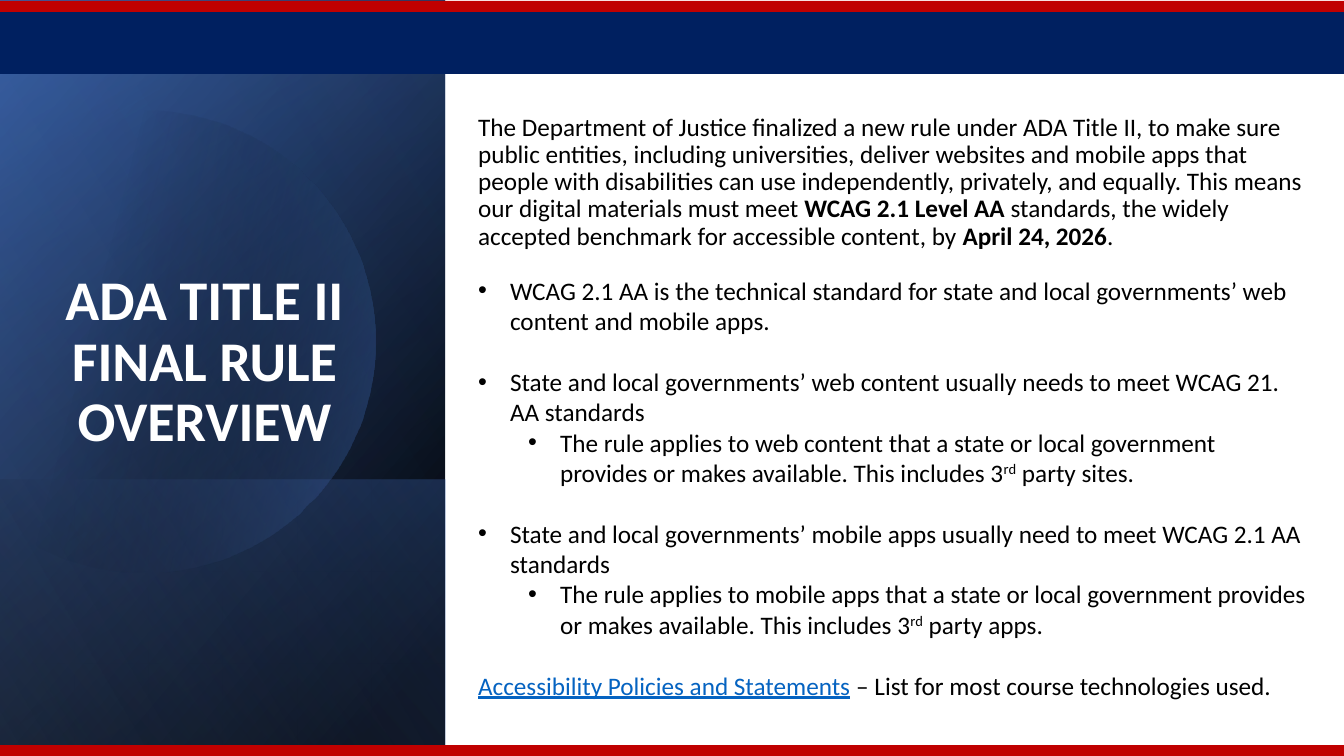
import math

import pptx
import pptx.dml.color
import pptx.enum.shapes
import pptx.enum.text
import pptx.oxml
import pptx.oxml.ns
import pptx.util

PX = 914400 / 100.8
WIDTH, HEIGHT = 1344, 756
FONT = "Calibri"
COLORS = {
    "white": "FFFFFF", "black": "000000", "navy": "002060", "red": "C00000",
    "link": "0563C1", "deep": "2F5597", "blue": "4472C4", "pale": "8FAADC",
}

TITLE = "ADA TITLE II FINAL RULE OVERVIEW"
# Each run is (text, style); each list item is (level, space before, runs).
INTRO = [
    ("The Department of Justice finalized a new rule under ADA Title II, to make sure "
     "public entities, including universities, deliver websites and mobile apps that "
     "people with disabilities can use independently, privately, and equally. This means "
     "our digital materials must meet ", "plain"),
    ("WCAG 2.1 Level AA", "bold"),
    (" standards, the widely accepted benchmark for accessible content, by ", "plain"),
    ("April 24, 2026", "bold"),
    (".", "plain"),
]
GAP = 22
RULES = [
    (1, 0, [("WCAG 2.1 AA is the technical standard for state and local governments’ "
             "web content and mobile apps.", "plain")]),
    (1, GAP, [("State and local governments’ web content usually needs to meet "
               "WCAG 21. AA standards", "plain")]),
    (2, 0, [("The rule applies to web content that a state or local government provides "
             "or makes available. This includes 3", "plain"),
            ("rd", "superscript"), (" party sites.", "plain")]),
    (1, GAP, [("State and local governments’ mobile apps usually need to meet "
               "WCAG 2.1 AA standards", "plain")]),
    (2, 0, [("The rule applies to mobile apps that a state or local government provides "
             "or makes available. This includes 3", "plain"),
            ("rd", "superscript"), (" party apps.", "plain")]),
    (0, GAP, [("Accessibility Policies and Statements", "link"),
              (" – List for most course technologies used.", "plain")]),
]
INDENTS = {0: 0, 1: 32, 2: 82}
HANGING = 32

STYLES = {
    "plain": {"size": 18, "color": "black"},
    "bold": {"size": 18, "color": "black", "bold": True},
    "superscript": {"size": 18, "color": "black", "baseline": 30000},
    "link": {"size": 18, "color": "link", "underline": True},
    "title": {"size": 40, "color": "white", "bold": True},
}

# Box, gradient angle, stops of (position, color, opacity), all percentages.
SIDE = (0, 0, 445, HEIGHT)
PANELS_BELOW = [
    (SIDE, 50, [(8, "black", 100), (100, "deep", 100)]),
    (SIDE, 30, [(0, "black", 0), (99, "blue", 46)]),
    ((0, 480, 445, 276), 130, [(2, "blue", 29), (100, "black", 30)]),
]
PANELS_ABOVE = [(SIDE, 120, [(0, "black", 0), (99, "pale", 11)])]
DISC = {"center": (144, 342), "radius": 231, "angle": 14,
        "stops": [(29, "black", 0), (100, "blue", 43)]}
BARS = [((0, 6, WIDTH, 68), "navy"), ((0, 745, WIDTH, 11), "red"),
        ((0, 1, WIDTH, 11), "red")]


def emu(pixels):
    return pptx.util.Emu(round(pixels * PX))


def rgb(name):
    return pptx.dml.color.RGBColor.from_string(COLORS[name])


def element(xml):
    """Parse one drawing element, adding its namespace."""
    tag, rest = xml[:-1].split(" ", 1) if xml.endswith("/>") else xml.split(" ", 1)
    closing = ">" if xml.endswith("/>") else ""
    return pptx.oxml.parse_xml(f"{tag} {pptx.oxml.ns.nsdecls('a')} {rest}{closing}")


def add_rectangle(shapes, box):
    rectangle = shapes.add_shape(pptx.enum.shapes.MSO_SHAPE.RECTANGLE, *map(emu, box))
    rectangle.line.fill.background()
    rectangle.shadow.inherit = False
    return rectangle


def set_gradient(shape, angle, stops):
    shape.fill.background()
    properties = shape.element.spPr
    stop_xml = "".join(
        f'<a:gs pos="{position * 1000}"><a:srgbClr val="{COLORS[color]}">'
        f'<a:alpha val="{opacity * 1000}"/></a:srgbClr></a:gs>'
        for position, color, opacity in stops)
    gradient = element(f'<a:gradFill rotWithShape="1"><a:gsLst>{stop_xml}</a:gsLst>'
                       f'<a:lin ang="{angle * 60000}" scaled="0"/></a:gradFill>')
    properties.replace(properties.find(pptx.oxml.ns.qn("a:noFill")), gradient)


def add_panel(shapes, box, angle, stops):
    """Fill the box with a mirrored rectangle turned by a quarter."""
    left, top, width, height = box
    shift = (width - height) / 2
    panel = add_rectangle(shapes, (left + shift, top - shift, height, width))
    panel.rotation = 90
    panel.element.spPr.get_or_add_xfrm().set("flipH", "1")
    set_gradient(panel, angle, stops)


def add_disc(shapes):
    """Draw the circle, cut off at the left edge of the slide."""
    (x, y), radius = DISC["center"], DISC["radius"]
    points = [(max(0, x + radius * math.cos(math.radians(turn))),
               y + radius * math.sin(math.radians(turn))) for turn in range(0, 360, 3)]
    builder = shapes.build_freeform(*points[0], scale=PX)
    builder.add_line_segments(points[1:], close=True)
    disc = builder.convert_to_shape()
    disc.line.fill.background()
    disc.shadow.inherit = False
    set_gradient(disc, DISC["angle"], DISC["stops"])


def place(placeholder, box, anchor):
    for name, value in zip(("left", "top", "width", "height"), box):
        setattr(placeholder, name, emu(value))
    frame = placeholder.text_frame
    frame.word_wrap = True
    frame.auto_size = pptx.enum.text.MSO_AUTO_SIZE.NONE
    frame.vertical_anchor = anchor
    placeholder.element.getparent().append(placeholder.element)
    return frame


def write(paragraph, runs, level=0, **formats):
    properties = paragraph._p.get_or_add_pPr()
    properties.set("marL", str(emu(INDENTS[level])))
    properties.set("indent", str(-emu(HANGING) if level else 0))
    if level:
        properties.append(element('<a:buFont typeface="Arial"/>'))
        properties.append(element('<a:buChar char="•"/>'))
    else:
        properties.append(pptx.oxml.parse_xml(f"<a:buNone {pptx.oxml.ns.nsdecls('a')}/>"))
    defaults = {"alignment": pptx.enum.text.PP_ALIGN.LEFT, "line_spacing": 1.0,
                "space_before": pptx.util.Pt(0), "space_after": pptx.util.Pt(0)}
    for name, value in {**defaults, **formats}.items():
        setattr(paragraph, name, value)
    for text, style_name in runs:
        style = STYLES[style_name]
        run = paragraph.add_run()
        run.text = text
        font = {"name": FONT, "size": pptx.util.Pt(style["size"]),
                "bold": style.get("bold", False), "underline": style.get("underline", False)}
        for name, value in font.items():
            setattr(run.font, name, value)
        run.font.color.rgb = rgb(style["color"])
        if "baseline" in style:
            run.font._element.set("baseline", str(style["baseline"]))


def main():
    presentation = pptx.Presentation()
    presentation.slide_width, presentation.slide_height = emu(WIDTH), emu(HEIGHT)
    slide = presentation.slides.add_slide(presentation.slide_layouts[3])
    shapes = slide.shapes
    title, intro, rules = list(slide.placeholders)[:3]

    for panel in PANELS_BELOW:
        add_panel(shapes, *panel)
    add_disc(shapes)
    for panel in PANELS_ABOVE:
        add_panel(shapes, *panel)
    for box, color in BARS:
        bar = add_rectangle(shapes, box)
        bar.fill.solid()
        bar.fill.fore_color.rgb = rgb(color)

    anchors = pptx.enum.text.MSO_ANCHOR
    frame = place(title, (28, 253, 353, 206), anchors.BOTTOM)
    write(frame.paragraphs[0], [(TITLE, "title")], line_spacing=0.9,
          alignment=pptx.enum.text.PP_ALIGN.CENTER, space_after=pptx.util.Pt(6))
    frame = place(intro, (468, 95, 862, 175), anchors.MIDDLE)
    write(frame.paragraphs[0], INTRO, line_spacing=0.9)
    frame = place(rules, (468, 270, 848, 437), anchors.TOP)
    for index, (level, gap, runs) in enumerate(RULES):
        paragraph = frame.add_paragraph() if index else frame.paragraphs[0]
        write(paragraph, runs, level, space_before=pptx.util.Pt(gap))
    presentation.save("out.pptx")


if __name__ == "__main__":
    main()
